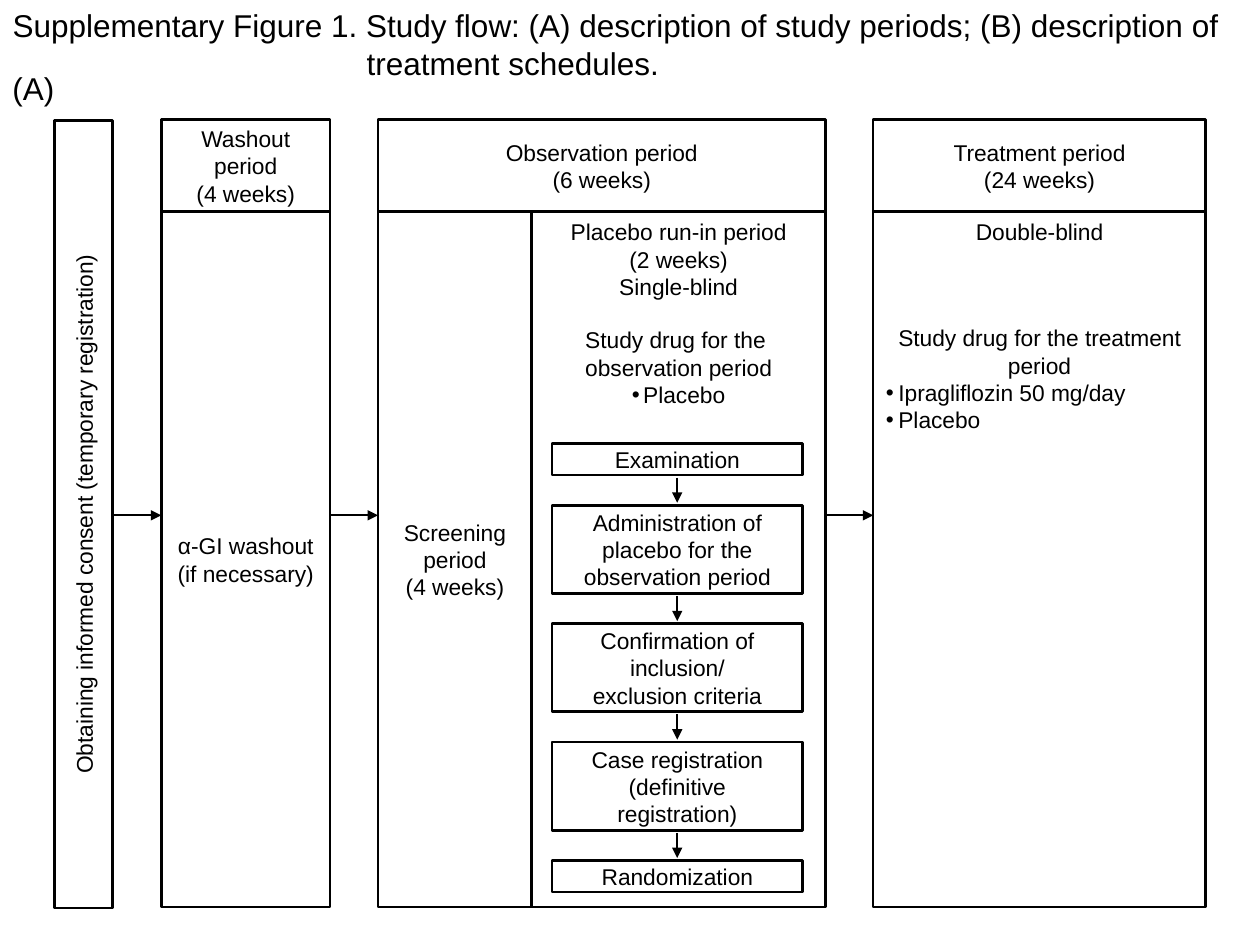
from dataclasses import dataclass
from lxml import etree
from pptx import Presentation
from pptx.dml.color import RGBColor
from pptx.enum.shapes import MSO_CONNECTOR, MSO_SHAPE
from pptx.enum.text import MSO_ANCHOR, MSO_AUTO_SIZE, PP_ALIGN
from pptx.oxml.ns import qn
from pptx.util import Inches, Pt

RECTANGLE = MSO_SHAPE.RECTANGLE
STRAIGHT = MSO_CONNECTOR.STRAIGHT
TOP, MIDDLE = MSO_ANCHOR.TOP, MSO_ANCHOR.MIDDLE
LEFT, CENTER = PP_ALIGN.LEFT, PP_ALIGN.CENTER
NO_AUTOFIT = MSO_AUTO_SIZE.NONE
TWO_CONTENT_LAYOUT = 3


@dataclass(frozen=True)
class Theme:
    ink: RGBColor = RGBColor(0, 0, 0)
    paper: RGBColor = RGBColor(255, 255, 255)
    font: str = "Arial"
    heading_size: float = 18
    label_size: float = 13
    blank_line: float = 15
    box_line: float = 1.5
    arrow_line: float = 1


@dataclass(frozen=True)
class Line:
    text: str
    bullet: bool = False
    align: int = CENTER
    blank_before: int = 0
    hang: float = 0


THEME = Theme()
HEADER_TOP, BODY_TOP, BOTTOM = 0.95, 1.68, 7.2
HEADER_HEIGHT, BODY_HEIGHT = BODY_TOP - HEADER_TOP, BOTTOM - BODY_TOP
WASHOUT_LEFT, WASHOUT_WIDTH = 1.28, 1.34
OBSERVATION_LEFT, OBSERVATION_WIDTH = 3, 3.55
SCREENING_WIDTH = 1.22
TREATMENT_LEFT, TREATMENT_WIDTH = 6.93, 2.64
STEP_LEFT, STEP_WIDTH, FIRST_STEP_TOP = 4.38, 1.99, 3.52
STEP_GAP, ARROW_MARGIN = 0.24, 0.02
FLOW_Y, FLOW_ARROW = 4.09, 0.38

CONSENT = "Obtaining informed consent (temporary registration)"
PERIOD_BOXES = [
    (WASHOUT_LEFT, HEADER_TOP, WASHOUT_WIDTH, HEADER_HEIGHT,
     ["Washout", "period", "(4 weeks)"]),
    (WASHOUT_LEFT, BODY_TOP, WASHOUT_WIDTH, BODY_HEIGHT,
     ["α-GI washout", "(if necessary)"]),
    (OBSERVATION_LEFT, HEADER_TOP, OBSERVATION_WIDTH, HEADER_HEIGHT,
     ["Observation period", "(6 weeks)"]),
    (OBSERVATION_LEFT, BODY_TOP, SCREENING_WIDTH, BODY_HEIGHT,
     ["Screening", "period", "(4 weeks)"]),
    (TREATMENT_LEFT, HEADER_TOP, TREATMENT_WIDTH, HEADER_HEIGHT,
     ["Treatment period", "(24 weeks)"]),
]
STEPS = [
    (0.25, ["Examination"]),
    (0.7, ["Administration of", "placebo for the", "observation period"]),
    (0.7, ["Confirmation of", "inclusion/", "exclusion criteria"]),
    (0.7, ["Case registration", "(definitive", "registration)"]),
    (0.25, ["Randomization"]),
]
OBSERVATION_DETAILS = [
    Line("Placebo run-in period"),
    Line("(2 weeks)"),
    Line("Single-blind"),
    Line("Study drug for the ", blank_before=1),
    Line("observation period"),
    Line("Placebo", bullet=True, hang=0.09),
]
TREATMENT_DETAILS = [
    Line("Double-blind"),
    Line("Study drug for the treatment", blank_before=3),
    Line("period"),
    Line("Ipragliflozin 50 mg/day", bullet=True, align=LEFT, hang=0.1),
    Line("Placebo", bullet=True, align=LEFT, hang=0.1),
]


def apply_format(target, values):
    for attribute, value in values.items():
        setattr(target, attribute, value)


def place(shape, left, top, width, height):
    apply_format(shape, {"left": Inches(left), "top": Inches(top),
                         "width": Inches(width), "height": Inches(height)})


def write_line(paragraph, line, size):
    properties = paragraph._p.get_or_add_pPr()
    properties.set("marL", str(Inches(line.hang)))
    properties.set("indent", str(-Inches(line.hang)))
    if line.bullet:
        etree.SubElement(properties, qn("a:buFont"), typeface=THEME.font)
        etree.SubElement(properties, qn("a:buChar"), char="•")
    else:
        etree.SubElement(properties, qn("a:buNone"))
    apply_format(paragraph, {
        "alignment": line.align,
        "space_before": Pt(line.blank_before * THEME.blank_line),
    })
    run = paragraph.add_run()
    run.text = line.text
    apply_format(run.font, {"name": THEME.font, "size": Pt(size)})
    run.font.color.rgb = THEME.ink


def write_lines(shape, lines, size=THEME.label_size, anchor=MIDDLE, wrap=False):
    frame = shape.text_frame
    apply_format(frame, {
        "auto_size": NO_AUTOFIT, "word_wrap": wrap, "vertical_anchor": anchor,
        "margin_left": Inches(0.1), "margin_right": Inches(0.1),
        "margin_top": Inches(0.05), "margin_bottom": Inches(0.05),
    })
    for index, line in enumerate(lines):
        paragraph = frame.add_paragraph() if index else frame.paragraphs[0]
        write_line(paragraph, line, size)


def outline(shape):
    shape.fill.solid()
    shape.fill.fore_color.rgb = THEME.paper
    shape.line.color.rgb = THEME.ink
    shape.line.width = Pt(THEME.box_line)


def add_box(slide, left, top, width, height, labels, wrap=False):
    box = slide.shapes.add_shape(RECTANGLE, Inches(left), Inches(top),
                                 Inches(width), Inches(height))
    box.shadow.inherit = False
    outline(box)
    write_lines(box, [Line(label) for label in labels], wrap=wrap)
    return box


def fill_details(body, left, width, lines, wrap):
    place(body, left, BODY_TOP, width, BODY_HEIGHT)
    outline(body)
    write_lines(body, lines, anchor=TOP, wrap=wrap)


def add_arrow(slide, start_x, start_y, end_x, end_y):
    arrow = slide.shapes.add_connector(
        STRAIGHT, Inches(start_x), Inches(start_y), Inches(end_x), Inches(end_y))
    arrow.line.color.rgb = THEME.ink
    arrow.line.width = Pt(THEME.arrow_line)
    etree.SubElement(arrow.line._get_or_add_ln(), qn("a:tailEnd"), type="triangle")
    etree.SubElement(arrow._element.spPr, qn("a:effectLst"))


def add_steps(slide):
    top = FIRST_STEP_TOP
    center = STEP_LEFT + STEP_WIDTH / 2
    for index, (height, labels) in enumerate(STEPS):
        if index:
            add_arrow(slide, center, top - STEP_GAP + ARROW_MARGIN,
                      center, top - ARROW_MARGIN)
        add_box(slide, STEP_LEFT, top, STEP_WIDTH, height, labels)
        top += height + STEP_GAP


def main():
    deck = Presentation()
    apply_format(deck, {"slide_width": Inches(10), "slide_height": Inches(7.5)})
    slide = deck.slides.add_slide(deck.slide_layouts[TWO_CONTENT_LAYOUT])
    heading, observation, treatment = slide.placeholders

    place(heading, 0, 0, 10, 0.71)
    write_lines(heading, [Line(
        "Supplementary Figure 1. Study flow: (A) description of study periods; "
        "(B) description of treatment schedules.", align=LEFT, hang=2.81)],
        THEME.heading_size, TOP, True)

    fill_details(observation, OBSERVATION_LEFT + SCREENING_WIDTH,
                 OBSERVATION_WIDTH - SCREENING_WIDTH, OBSERVATION_DETAILS, False)
    fill_details(treatment, TREATMENT_LEFT, TREATMENT_WIDTH, TREATMENT_DETAILS, True)

    consent = add_box(slide, -2.46, 3.85, 6.25, 0.46, [CONSENT], wrap=True)
    consent.rotation = 270
    for period in PERIOD_BOXES:
        add_box(slide, *period)
    add_steps(slide)
    for target in (WASHOUT_LEFT, OBSERVATION_LEFT, TREATMENT_LEFT):
        add_arrow(slide, target - FLOW_ARROW, FLOW_Y, target, FLOW_Y)

    panel = slide.shapes.add_textbox(Inches(0), Inches(0.5), Inches(0.63), Inches(0.4))
    write_lines(panel, [Line("(A)", align=LEFT)], THEME.heading_size, TOP, True)
    deck.save("out.pptx")


if __name__ == "__main__":
    main()
